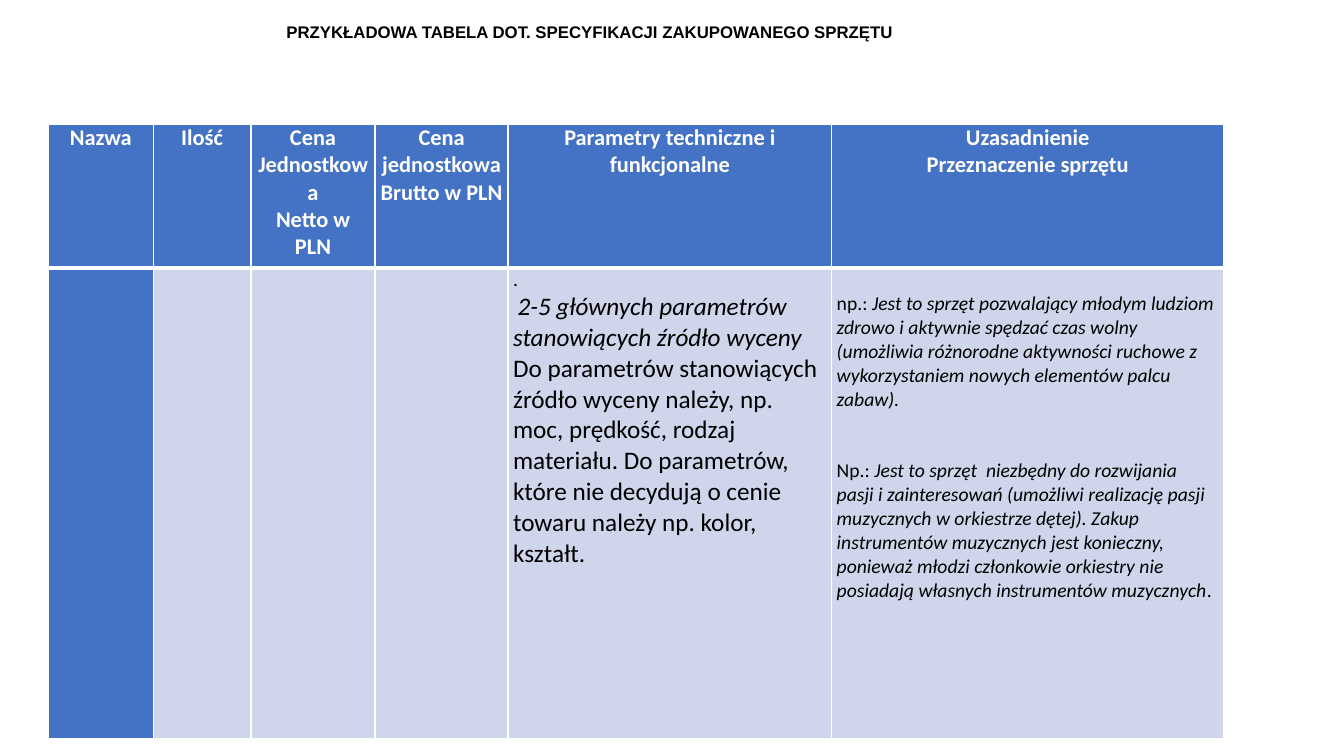
from lxml import etree
from pptx import Presentation
from pptx.dml.color import RGBColor
from pptx.enum.shapes import MSO_SHAPE
from pptx.enum.text import MSO_ANCHOR, PP_ALIGN
from pptx.oxml.ns import qn
from pptx.util import Inches, Pt

RECTANGLE = MSO_SHAPE.RECTANGLE
TOP = MSO_ANCHOR.TOP
LEFT, CENTER = PP_ALIGN.LEFT, PP_ALIGN.CENTER

BLUE, PALE, WHITE, BLACK = "4472C4", "CFD5EA", "FFFFFF", "000000"


def color(value):
    return RGBColor.from_string(value)


def set_attributes(target, values):
    for name, value in values.items():
        setattr(target, name, value)


class SlideBuilder:
    font = "Calibri"
    cell_margins = {"margin_left": Inches(0.05), "margin_right": Inches(0.05),
                    "margin_top": 0, "margin_bottom": 0}

    def __init__(self, slide):
        self.slide = slide

    def add_text(self, frame, paragraphs, text_color, **font_values):
        """Each paragraph is (format values, [(text, font values), ...])."""
        for index, (layout, runs) in enumerate(paragraphs):
            paragraph = frame.add_paragraph() if index else frame.paragraphs[0]
            set_attributes(paragraph, layout)
            for text, values in runs:
                run = paragraph.add_run()
                run.text = text
                set_attributes(run.font, {"name": self.font, **font_values, **values})
                run.font.color.rgb = color(text_color)

    def title(self, text, left, top, width, height):
        shape = self.slide.shapes.add_shape(
            RECTANGLE, Inches(left), Inches(top), Inches(width), Inches(height))
        shape.shadow.inherit = False
        shape.fill.solid()
        shape.fill.fore_color.rgb = color(WHITE)
        shape.line.fill.background()
        set_attributes(shape.text_frame, {
            "word_wrap": False, "vertical_anchor": TOP,
            "margin_left": Inches(0.37), "margin_top": Inches(0.18)})
        self.add_text(shape.text_frame, [({"alignment": LEFT}, [(text, {})])], BLACK,
                      name="Arial", size=Pt(12), bold=True)

    def table(self, left, top, widths, heights):
        table = self.slide.shapes.add_table(
            len(heights), len(widths), Inches(left), Inches(top),
            Inches(sum(widths)), Inches(sum(heights))).table
        for column, width in zip(table.columns, widths):
            column.width = Inches(width)
        for row, height in zip(table.rows, heights):
            row.height = Inches(height)
        return table

    def cell(self, cell, fill, borders):
        set_attributes(cell, self.cell_margins)
        properties = cell._tc.get_or_add_tcPr()
        for side, width in borders.items():
            line = etree.SubElement(properties, qn(f"a:ln{side}"), w=str(Pt(width)))
            solid = etree.SubElement(line, qn("a:solidFill"))
            etree.SubElement(solid, qn("a:srgbClr"), val=WHITE)
        cell.fill.solid()
        cell.fill.fore_color.rgb = color(fill)


HEADERS = [
    ["Nazwa"],
    ["Ilość"],
    ["Cena Jednostkowa", "Netto w PLN"],
    ["Cena jednostkowa Brutto w PLN"],
    ["Parametry techniczne i funkcjonalne"],
    ["Uzasadnienie", "Przeznaczenie sprzętu"],
]
ITALIC = {"italic": True}
LARGE = {"size": Pt(18)}
PARAMETERS = [
    ({}, [(".", {})]),
    ({}, [(" ", {}),
          ("2-5 głównych parametrów stanowiących źródło wyceny", {**LARGE, **ITALIC})]),
    ({}, [("Do parametrów stanowiących źródło wyceny należy, np. moc, prędkość, rodzaj "
           "materiału. Do parametrów, które nie decydują o cenie towaru należy np. kolor, "
           "kształt.", LARGE)]),
]
JUSTIFICATION = [
    ({}, [("np.: ", {}),
          ("Jest to sprzęt pozwalający młodym ludziom zdrowo i aktywnie spędzać czas wolny "
           "(umożliwia różnorodne aktywności ruchowe z wykorzystaniem nowych elementów "
           "palcu zabaw).", ITALIC)]),
    ({"space_before": Pt(34)},
     [("Np.: ", {}),
      ("Jest to sprzęt  niezbędny do rozwijania pasji i zainteresowań (umożliwi realizację "
       "pasji muzycznych w orkiestrze dętej). Zakup instrumentów muzycznych jest konieczny, "
       "ponieważ młodzi członkowie orkiestry nie posiadają własnych instrumentów "
       "muzycznych", ITALIC),
      (".", {})]),
]


def main():
    presentation = Presentation()
    set_attributes(presentation, {"slide_width": Inches(13.33), "slide_height": Inches(7.5)})
    builder = SlideBuilder(presentation.slides.add_slide(presentation.slide_layouts[6]))

    # Equipment table
    table = builder.table(0.48, 1.23, [1.04, 0.97, 1.23, 1.32, 3.21, 3.89], [1.43, 4.67])

    # Header row
    for cell, lines in zip(table.rows[0].cells, HEADERS):
        builder.cell(cell, BLUE, {"L": 1, "R": 1, "T": 1, "B": 3})
        paragraphs = [({"alignment": CENTER}, [(line, {})]) for line in lines]
        builder.add_text(cell.text_frame, paragraphs, WHITE, size=Pt(16), bold=True)

    # Example row
    for index, cell in enumerate(table.rows[1].cells):
        builder.cell(cell, PALE if index else BLUE, {"L": 1, "R": 1, "T": 3, "B": 1})
    for index, paragraphs in ((4, PARAMETERS), (5, JUSTIFICATION)):
        builder.add_text(table.cell(1, index).text_frame, paragraphs, BLACK,
                         size=Pt(14), bold=False)
    table.cell(1, 5).margin_top = Inches(0.24)

    # Title
    builder.title("PRZYKŁADOWA TABELA DOT. SPECYFIKACJI ZAKUPOWANEGO SPRZĘTU",
                  2.47, 0.04, 6.7, 0.72)

    presentation.save("out.pptx")


if __name__ == "__main__":
    main()
